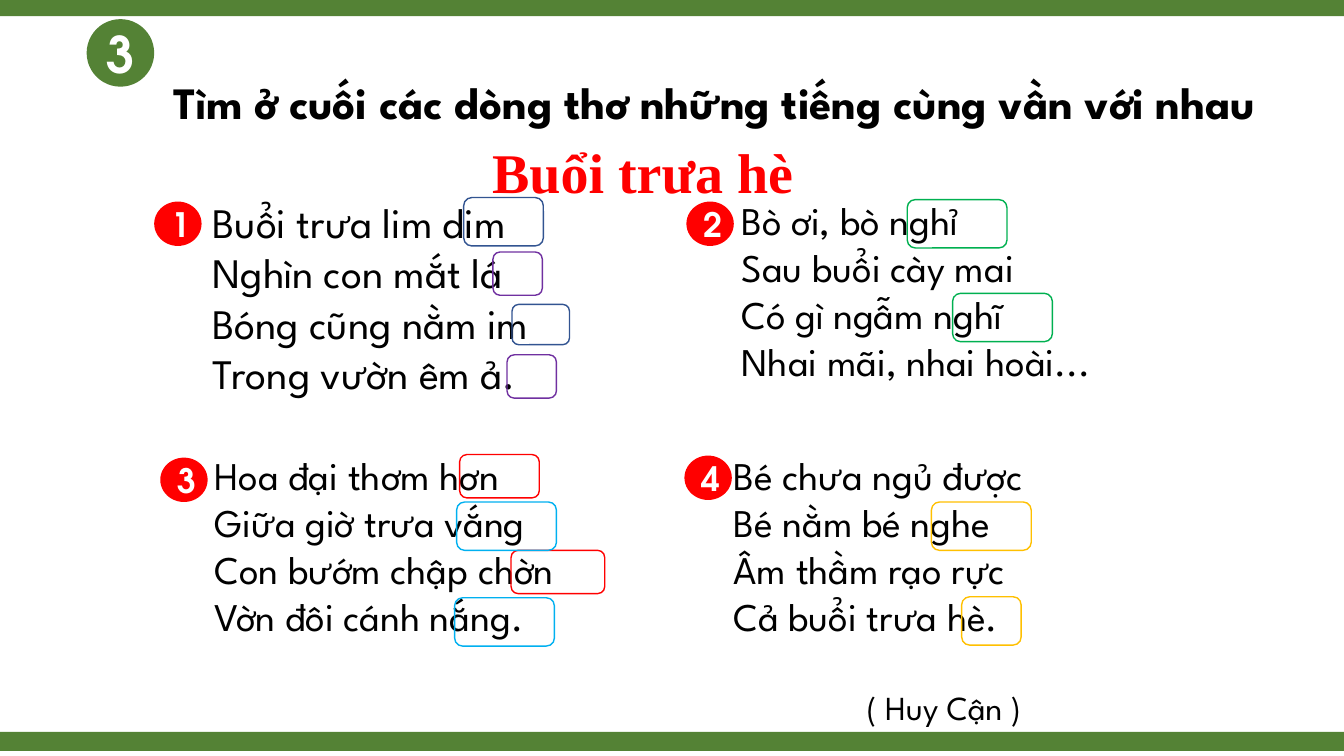
from pptx import Presentation
from pptx import util as u
from pptx.dml.color import RGBColor
from pptx.enum import shapes, text

GREEN, RED, BLUE, PURPLE = "548235", "FF0000", "325491", "7030A0"
CYAN, LEAF, GOLD = "00B0F0", "00B050", "FFC000"
WHITE, BLACK = "FFFFFF", "000000"
SPARTAN, GOTHIC, TIMES = "League Spartan", "TeX Gyre Adventor", "Times New Roman"
KIND = shapes.MSO_SHAPE
CELL = u.Inches(0.1)
COLS, ROWS = 133.33, 75

deck = Presentation()
deck.slide_width, deck.slide_height = int(COLS * CELL), int(ROWS * CELL)
slide = deck.slides.add_slide(deck.slide_layouts[5])


def draw(kind, area, fill=None, line=None):
    shape = slide.shapes.add_shape(kind, *[int(n * CELL) for n in area])
    shape.shadow.inherit = False
    for part, tint in ((shape.fill, fill), (shape.line.fill, line)):
        if tint:
            part.solid()
            part.fore_color.rgb = RGBColor.from_string(tint)
        else:
            part.background()
    if line:
        shape.line.width = u.Pt(1)
    return shape


def write(shape, lines, size, face, tint, bold=False, align=text.PP_ALIGN.CENTER):
    frame = shape.text_frame
    frame.word_wrap = True
    frame.text = "\n".join(lines)
    for para in frame.paragraphs:
        para.alignment = align
        para.font.size = u.Pt(size)
        para.font.name = face
        para.font.bold = bold
        para.font.color.rgb = RGBColor.from_string(tint)
    return frame


for top in (-0.3, 72.6):
    draw(KIND.RECTANGLE, (0, top, COLS, 1.9), GREEN)

task = draw(KIND.OVAL, (8.6, 1.9, 6.7, 6.7), GREEN)
write(task, ["3"], 36, GOTHIC, WHITE, True)

title = slide.shapes.title
title.left, title.top, title.width, title.height = [
    int(n * CELL) for n in (8.6, 6.9, 124.7, 6.4)]
head = write(title, ["Tìm ở cuối các dòng thơ những tiếng cùng vần với nhau"],
             32, SPARTAN, BLACK, True)
head.vertical_anchor = text.MSO_ANCHOR.TOP
head.auto_size = text.MSO_AUTO_SIZE.NONE

verses = [
    ((20.1, 19, 44.9, 21.2), 30,
     ["Buổi trưa lim dim", "Nghìn con mắt lá", "Bóng cũng nằm im", "Trong vườn êm ả."]),
    ((72.6, 19, 42.7, 20.2), 28,
     ["Bò ơi, bò nghỉ", "Sau buổi cày mai", "Có gì ngẫm nghĩ", "Nhai mãi, nhai hoài..."]),
    ((20.3, 44.3, 46.2, 19.9), 28,
     ["Hoa đại thơm hơn", "Giữa giờ trưa vắng", "Con bướm chập chờn", "Vờn đôi cánh nắng."]),
    ((71.8, 44.3, 46.2, 28.6), 28,
     ["Bé chưa ngủ được", "Bé nằm bé nghe", "Âm thầm rạo rực", "Cả buổi trưa hè.",
      "( Huy Cận )"]),
]
for area, size, lines in verses:
    box = slide.shapes.add_textbox(*[int(n * CELL) for n in area])
    verse = write(box, lines, size, SPARTAN, BLACK, align=text.PP_ALIGN.LEFT)

poet = verse.paragraphs[-1]
poet.font.size = u.Pt(24)
poet.space_before = u.Pt(34)
poet._p.get_or_add_pPr().set("marL", str(int(13.2 * CELL)))

rhymes = [
    (BLUE, (46, 19.6, 7.9, 4.8), (50.8, 30.2, 5.7, 4)),
    (RED, (45.6, 45.1, 7.9, 4.3), (50.7, 54.6, 9.3, 4.3)),
    (PURPLE, (48.9, 25, 4.9, 4.3), (50.3, 35.2, 4.9, 4.3)),
    (CYAN, (45.3, 49.8, 9.9, 4.8), (45.1, 59.3, 9.9, 4.8)),
    (LEAF, (90, 19.8, 9.9, 4.8), (94.5, 29.1, 9.9, 4.8)),
    (GOLD, (92.4, 49.8, 9.9, 4.8), (95.4, 59.2, 5.9, 4.8)),
]
for tint, *pair in rhymes:
    for area in pair:
        draw(KIND.ROUNDED_RECTANGLE, area, line=tint)

spots = [(15.3, 20), (68.1, 20), (15.9, 45.4), (67.9, 45.2)]
for num, (left, top) in enumerate(spots, 1):
    disc = draw(KIND.OVAL, (left, top, 4.7, 4.4), RED)
    write(disc, [str(num)], 24, GOTHIC, WHITE, True)

name = slide.shapes.add_textbox(*[int(n * CELL) for n in (41.4, 13.2, 44.7, 7.7)])
write(name, ["Buổi trưa hè"], 40, TIMES, RED, True)

deck.save("out.pptx")
